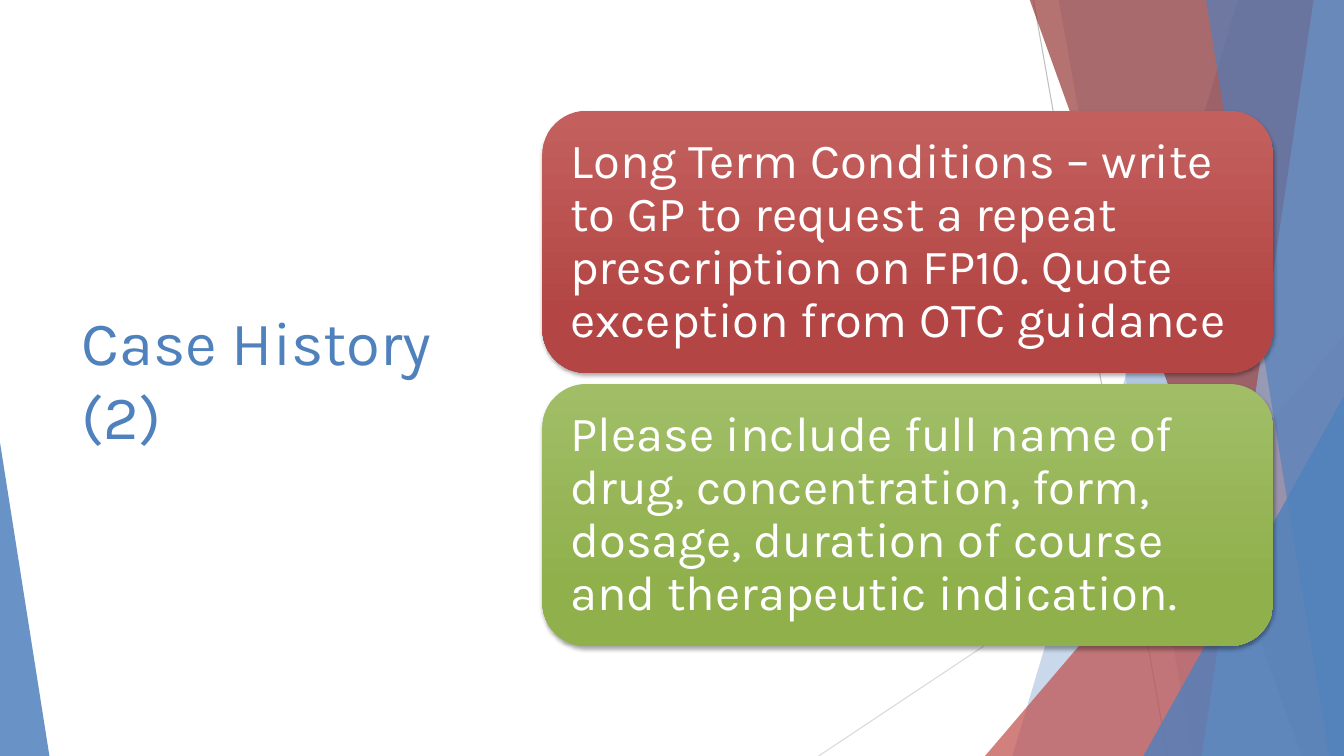
from lxml import etree
from pptx import Presentation
from pptx import util as u
from pptx.dml.color import RGBColor
from pptx.enum import shapes, text
from pptx.oxml import parse_xml
from pptx.oxml.ns import nsdecls, qn

FONT = "Karla"
BLUE = "4F81BD"
WIDTH, HEIGHT = 13.33, 7.5
BLEED = -0.01


def colour(value):
    """Turn a hex string into a colour."""
    return RGBColor.from_string(value)


def tint(shape, value, opacity):
    """Fill a shape with a partly transparent colour and no outline."""
    shape.shadow.inherit = False
    shape.line.fill.background()
    shape.fill.solid()
    shape.fill.fore_color.rgb = colour(value)
    shade = shape.element.spPr.find(qn("a:solidFill"))[0]
    etree.SubElement(shade, qn("a:alpha")).set("val", str(opacity * 1000))


def add_hairline(page, start, end, value):
    """Draw a thin line between two points."""
    line = page.shapes.add_connector(
        shapes.MSO_CONNECTOR.STRAIGHT, *map(u.Inches, start + end))
    line.line.color.rgb = colour(value)
    line.line.width = u.Pt(0.75)
    etree.SubElement(line.element.spPr, qn("a:effectLst"))


def add_band(page, top, bottom, value, opacity):
    """Fill from a slanted edge to the right side of the slide."""
    corners = [(WIDTH, BLEED), (WIDTH, HEIGHT), (bottom, HEIGHT)]
    builder = page.shapes.build_freeform(
        u.Inches(top), u.Inches(BLEED))
    builder.add_line_segments(
        [(u.Inches(x), u.Inches(y)) for x, y in corners], close=True)
    tint(builder.convert_to_shape(), value, opacity)


def add_corner(page, left, top, width, peak, value, opacity):
    """Stand a triangle on the lower edge of the slide."""
    corner = page.shapes.add_shape(
        shapes.MSO_SHAPE.ISOSCELES_TRIANGLE,
        *map(u.Inches, (left, top, width, HEIGHT - top)))
    corner.adjustments[0] = peak
    tint(corner, value, opacity)


def add_backdrop(page):
    """Layer the lines, bands and corners from back to front."""
    add_hairline(page, (10.25, 0), (11.58, HEIGHT), "BFBFBF")
    add_hairline(page, (WIDTH, 4.03), (8.12, HEIGHT), "D9D9D9")
    add_band(page, 12.28, 10.04, BLUE, 30)
    add_band(page, 10.5, 11.83, BLUE, 20)
    add_corner(page, 9.77, 3.33, 3.56, 1, "C0504D", 72)
    add_band(page, 10.21, 12.91, "953735", 70)
    add_band(page, 13.03, 11.92, "95B3D7", 70)
    add_band(page, 11.96, 13.18, BLUE, 65)
    add_corner(page, 11.34, 3.93, 1.99, 1, BLUE, 80)
    add_corner(page, 0, 4.39, 0.49, 0, BLUE, 85)


def write(frame, words, size, value):
    """Write one left-aligned paragraph, centred vertically."""
    frame.word_wrap = True
    frame.vertical_anchor = text.MSO_ANCHOR.MIDDLE
    para = frame.paragraphs[0]
    para.alignment = text.PP_ALIGN.LEFT
    span = para.add_run()
    span.text = words
    span.font.name = FONT
    span.font.size = u.Pt(size)
    span.font.color.rgb = colour(value)
    return para


def add_title(page, words, left, top, width, height):
    """Place the title in front of the backdrop."""
    title = page.shapes.title
    title.element.getparent().append(title.element)
    title.left, title.top, title.width, title.height = map(
        u.Inches, (left, top, width, height))
    write(title.text_frame, words, 44, BLUE)


def add_card(page, words, shades, left, top, width, height):
    """Draw a rounded card with a gradient, a soft shadow and text."""
    card = page.shapes.add_shape(
        shapes.MSO_SHAPE.ROUNDED_RECTANGLE,
        *map(u.Inches, (left, top, width, height)))
    card.line.fill.background()
    card.fill.gradient()
    card.fill.gradient_angle = 270
    for stop, value, position in zip(
            card.fill.gradient_stops, shades, (0, 0.78)):
        stop.color.rgb = colour(value)
        stop.position = position
    card.element.spPr.append(parse_xml(
        f'<a:effectLst {nsdecls("a")}>'
        f'<a:outerShdw blurRad="{u.Pt(3)}" dist="{u.Pt(2)}" dir="5400000" '
        'rotWithShape="0"><a:srgbClr val="000000"><a:alpha val="35000"/>'
        '</a:srgbClr></a:outerShdw></a:effectLst>'))
    frame = card.text_frame
    frame.margin_left = frame.margin_right = u.Inches(0.15)
    frame.margin_top = frame.margin_bottom = u.Inches(0.15)
    write(frame, words, 35, "FFFFFF").line_spacing = 0.9


def add_cards(page, cards, left, top, width, height, gap):
    """Stack cards of equal height within a box."""
    each = (height - gap * (len(cards) - 1)) / len(cards)
    for index, (words, shades) in enumerate(cards):
        add_card(page, words, shades,
                 left, top + index * (each + gap), width, each)


def main():
    """Build and save the slide."""
    deck = Presentation()
    deck.slide_width, deck.slide_height = u.Inches(WIDTH), u.Inches(HEIGHT)
    page = deck.slides.add_slide(deck.slide_layouts.get_by_name("Title Only"))
    add_backdrop(page)
    add_title(page, "Case History (2)", 0.71, 1.51, 3.88, 4.48)
    cards = [
        ("Long Term Conditions – write to GP to request a repeat "
         "prescription on FP10. Quote exception from OTC guidance",
         ("C3605E", "B34644")),
        ("Please include full name of drug, concentration, form, dosage, "
         "duration of course and therapeutic indication.",
         ("A1BE67", "90B04C")),
    ]
    add_cards(page, cards, 5.38, 1.1, 7.25, 5.31, 0.11)
    deck.save("out.pptx")


if __name__ == "__main__":
    main()
